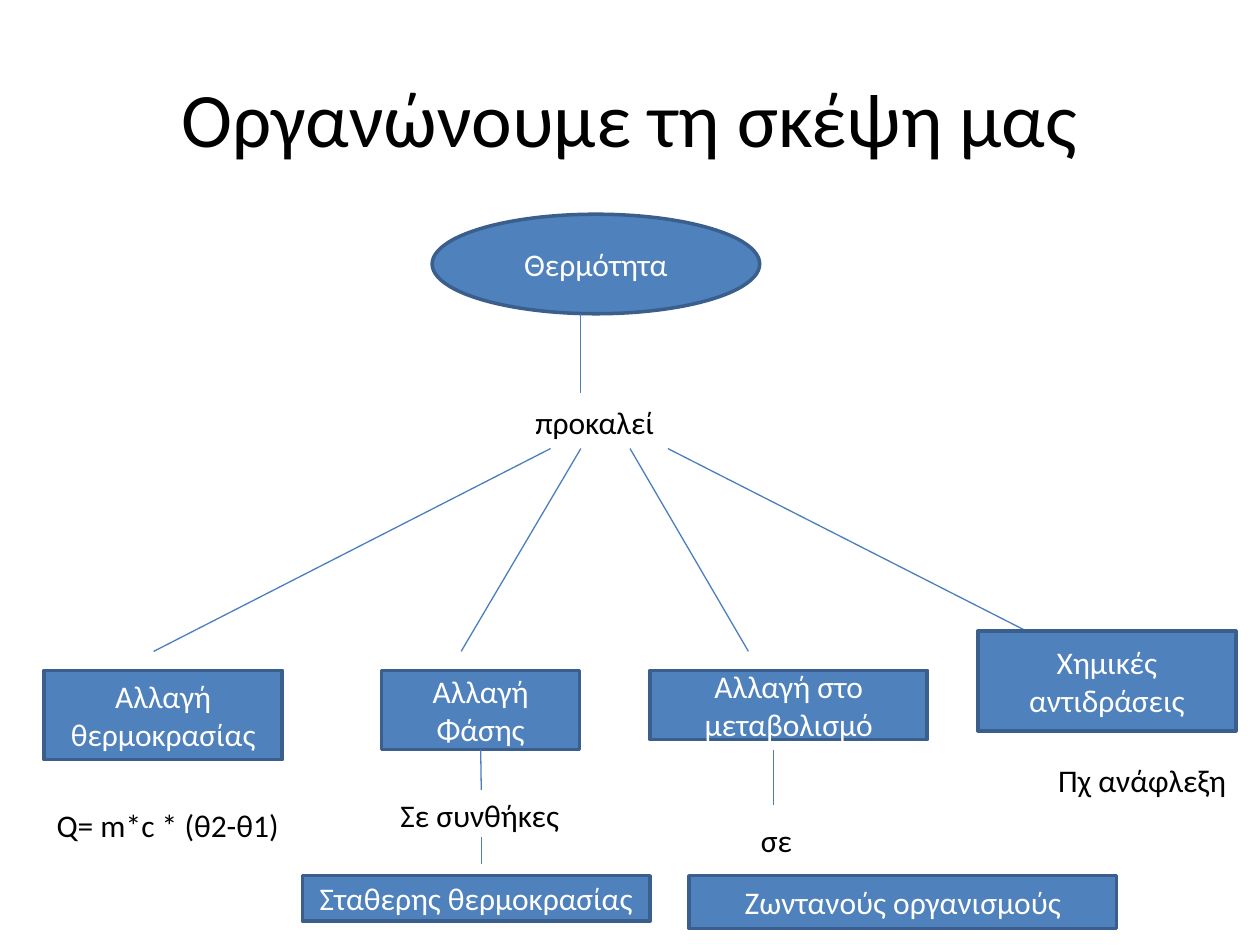
from lxml.etree import SubElement
from pptx import Presentation
from pptx.dml.color import RGBColor
from pptx.enum.shapes import MSO_CONNECTOR as Link, MSO_SHAPE as Kind
from pptx.enum.text import MSO_ANCHOR as Anchor, MSO_AUTO_SIZE as Fit, PP_ALIGN as Align
from pptx.oxml.ns import qn
from pptx.util import Inches, Pt

COLORS = {
    "fill": "4F81BD",
    "edge": "3A5F8C",
    "link": "4B7EBC",
    "dark": "000000",
    "light": "FFFFFF",
}
FONT = "Calibri"


def color(name):
    return RGBColor.from_string(COLORS[name])


def write(frame, text, size, tint, align):
    par = frame.paragraphs[0]
    par.alignment = align
    run = par.add_run()
    run.text = text
    run.font.name = FONT
    run.font.size = Pt(size)
    run.font.color.rgb = color(tint)


def add_title(slide, text):
    title = slide.shapes.title
    title.left, title.top = Inches(0.5), Inches(0.3)
    title.width, title.height = Inches(9), Inches(1.25)
    title.text_frame.vertical_anchor = Anchor.MIDDLE
    write(title.text_frame, text, 44, "dark", Align.CENTER)


def add_node(slide, text, left, top, width, height, kind=Kind.RECTANGLE):
    node = slide.shapes.add_shape(
        kind, Inches(left), Inches(top), Inches(width), Inches(height))
    node.shadow.inherit = False
    node.fill.solid()
    node.fill.fore_color.rgb = color("fill")
    node.line.color.rgb = color("edge")
    node.line.width = Pt(2)
    frame = node.text_frame
    frame.word_wrap = True
    frame.vertical_anchor = Anchor.MIDDLE
    write(frame, text, 18, "light", Align.CENTER)
    return node


def add_label(slide, text, left, top, width):
    box = slide.shapes.add_textbox(
        Inches(left), Inches(top), Inches(width), Inches(0.4))
    frame = box.text_frame
    frame.word_wrap = False
    frame.auto_size = Fit.SHAPE_TO_FIT_TEXT
    write(frame, text, 18, "dark", Align.LEFT)


def add_link(slide, x1, y1, x2, y2):
    link = slide.shapes.add_connector(
        Link.STRAIGHT, Inches(x1), Inches(y1), Inches(x2), Inches(y2))
    link.line.color.rgb = color("link")
    link.line.width = Pt(0.75)
    SubElement(link._element.spPr, qn("a:effectLst"))
    return link


def main():
    deck = Presentation()
    deck.slide_width, deck.slide_height = Inches(10), Inches(7.5)
    slide = deck.slides.add_slide(deck.slide_layouts[5])
    add_title(slide, "Οργανώνουμε τη σκέψη μας")

    add_node(slide, "Θερμότητα", 3.43, 1.7, 2.6, 0.79, Kind.OVAL)
    add_link(slide, 4.61, 2.49, 4.61, 3.12)
    add_label(slide, "προκαλεί", 4.15, 3.15, 1.16)
    for start, end, low in [
        (4.37, 1.22, 5.17),
        (4.61, 3.66, 5.17),
        (5, 5.94, 5.17),
        (5.3, 8.15, 5.01),
    ]:
        add_link(slide, start, 3.56, end, low)

    add_node(slide, "Αλλαγή θερμοκρασίας", 0.35, 5.32, 1.89, 0.71)
    add_label(slide, "Q= m*c * (θ2-θ1)", 0.35, 6.35, 1.99)

    phase = add_node(slide, "Αλλαγή Φάσης", 3.03, 5.32, 1.57, 0.63)
    add_link(slide, 3.82, 5.95, 3.82, 6.27).begin_connect(phase, 2)
    add_label(slide, "Σε συνθήκες", 3.08, 6.27, 1.48)
    add_link(slide, 3.82, 6.64, 3.82, 6.86)
    add_node(slide, "Σταθερης θερμοκρασίας", 2.4, 6.95, 2.76, 0.36)

    add_node(slide, "Αλλαγή στο μεταβολισμό", 5.16, 5.32, 2.2, 0.55)
    add_link(slide, 6.14, 5.95, 6.14, 6.39)
    add_label(slide, "σε", 5.94, 6.47, 0.45)
    add_node(slide, "Ζωντανούς οργανισμούς", 5.47, 6.95, 3.39, 0.42)

    add_node(slide, "Χημικές αντιδράσεις", 7.76, 5.01, 2.05, 0.79)
    add_label(slide, "Πχ ανάφλεξη", 8.3, 5.99, 1.55)
    deck.save("out.pptx")


if __name__ == "__main__":
    main()
